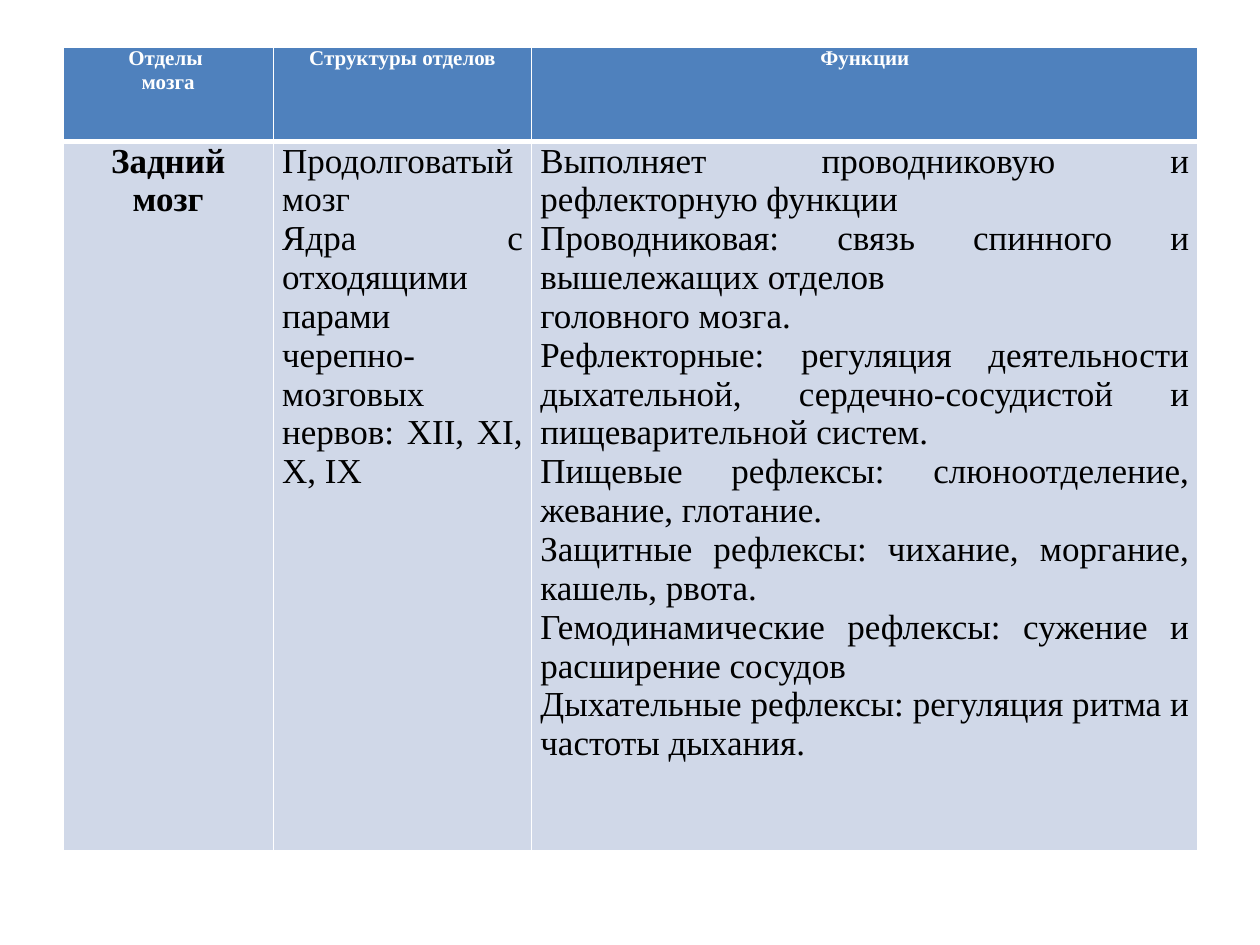
"""Builds a slide with a table of hindbrain structures and functions."""
import dataclasses
import pptx
import pptx.dml.color
import pptx.enum.text
import pptx.oxml
import pptx.oxml.ns
import pptx.table
import pptx.util

Align = pptx.enum.text.PP_ALIGN
Inches = pptx.util.Inches


@dataclasses.dataclass(frozen=True)
class Theme:
    font: str = "Times New Roman"
    head: str = "4F81BD"
    body: str = "D0D8E8"
    light: str = "FFFFFF"
    dark: str = "000000"
    small: int = 12
    large: int = 20
    thin: int = 1
    thick: int = 3


@dataclasses.dataclass(frozen=True)
class Look:
    fill: str
    ink: str
    size: int
    bold: bool
    align: Align
    edges: dict[str, int]


@dataclasses.dataclass(frozen=True)
class Entry:
    lines: tuple[str, ...]
    look: Look


THEME = Theme()
WIDE, HIGH = 10, 7.5
LEFT, TOP = 0.05, 0.05
COLS = (0.167, 0.205, 0.529)
ROWS = (0.1, 0.75)
THIN = dict.fromkeys(("lnL", "lnR", "lnT", "lnB"), THEME.thin)
HEAD = Look(THEME.head, THEME.light, THEME.small, True, Align.CENTER,
            THIN | {"lnB": THEME.thick})
NAME = Look(THEME.body, THEME.dark, THEME.large, True, Align.CENTER,
            THIN | {"lnT": THEME.thick})
BODY = dataclasses.replace(NAME, bold=False, align=Align.JUSTIFY)

GRID = (
    (
        Entry(("Отделы ", "мозга"), HEAD),
        Entry(("Структуры отделов",), HEAD),
        Entry(("Функции",), HEAD),
    ),
    (
        Entry(("Задний мозг",), NAME),
        Entry((
            "Продолговатый мозг",
            "Ядра с отходящими парами черепно-мозговых нервов: XII, XI, X, IX",
        ), BODY),
        Entry((
            "Выполняет проводниковую и рефлекторную функции",
            "Проводниковая: связь спинного и вышележащих отделов",
            "головного мозга.",
            "Рефлекторные: регуляция деятельности дыхательной, "
            "сердечно-сосудистой и пищеварительной систем.",
            "Пищевые рефлексы: слюноотделение, жевание, глотание.",
            "Защитные рефлексы: чихание, моргание, кашель, рвота.",
            "Гемодинамические рефлексы: сужение и расширение сосудов",
            "Дыхательные рефлексы: регуляция ритма и частоты дыхания.",
        ), BODY),
    ),
)


def assign(target: object, values: dict[str, object]) -> None:
    """Set every named attribute on the target."""
    for name, value in values.items():
        setattr(target, name, value)


def paint(value: str) -> pptx.dml.color.RGBColor:
    """Turn a hex string into a colour."""
    return pptx.dml.color.RGBColor.from_string(value)


def border(cell: pptx.table._Cell, edges: dict[str, int]) -> None:
    """Add solid borders of the given widths to a cell."""
    props = cell._tc.get_or_add_tcPr()
    for tag, width in edges.items():
        props.append(pptx.oxml.parse_xml(
            f'<a:{tag} {pptx.oxml.ns.nsdecls("a")} w="{pptx.util.Pt(width)}">'
            f'<a:solidFill><a:srgbClr val="{THEME.light}"/></a:solidFill>'
            f'</a:{tag}>'))


def write(cell: pptx.table._Cell, entry: Entry) -> None:
    """Fill a cell with styled paragraphs."""
    look = entry.look
    border(cell, look.edges)
    assign(cell, {"margin_left": Inches(0.07), "margin_right": Inches(0.07),
                  "margin_top": 0, "margin_bottom": 0})
    cell.fill.solid()
    cell.fill.fore_color.rgb = paint(look.fill)
    cell.text = "\n".join(entry.lines)
    for para in cell.text_frame.paragraphs:
        para.alignment = look.align
        font = para.runs[0].font
        assign(font, {"name": THEME.font, "bold": look.bold,
                      "size": pptx.util.Pt(look.size)})
        font.color.rgb = paint(look.ink)


def main() -> None:
    """Build and save the slide."""
    deck = pptx.Presentation()
    assign(deck, {"slide_width": Inches(WIDE), "slide_height": Inches(HIGH)})
    slide = deck.slides.add_slide(deck.slide_layouts[6])
    table = slide.shapes.add_table(
        len(ROWS), len(COLS), Inches(LEFT * WIDE), Inches(TOP * HIGH),
        Inches(sum(COLS) * WIDE), Inches(sum(ROWS) * HIGH)).table
    for col, share in zip(table.columns, COLS):
        col.width = Inches(share * WIDE)
    for row, share, line in zip(table.rows, ROWS, GRID):
        row.height = Inches(share * HIGH)
        for cell, entry in zip(row.cells, line):
            write(cell, entry)
    deck.save("out.pptx")


if __name__ == "__main__":
    main()
